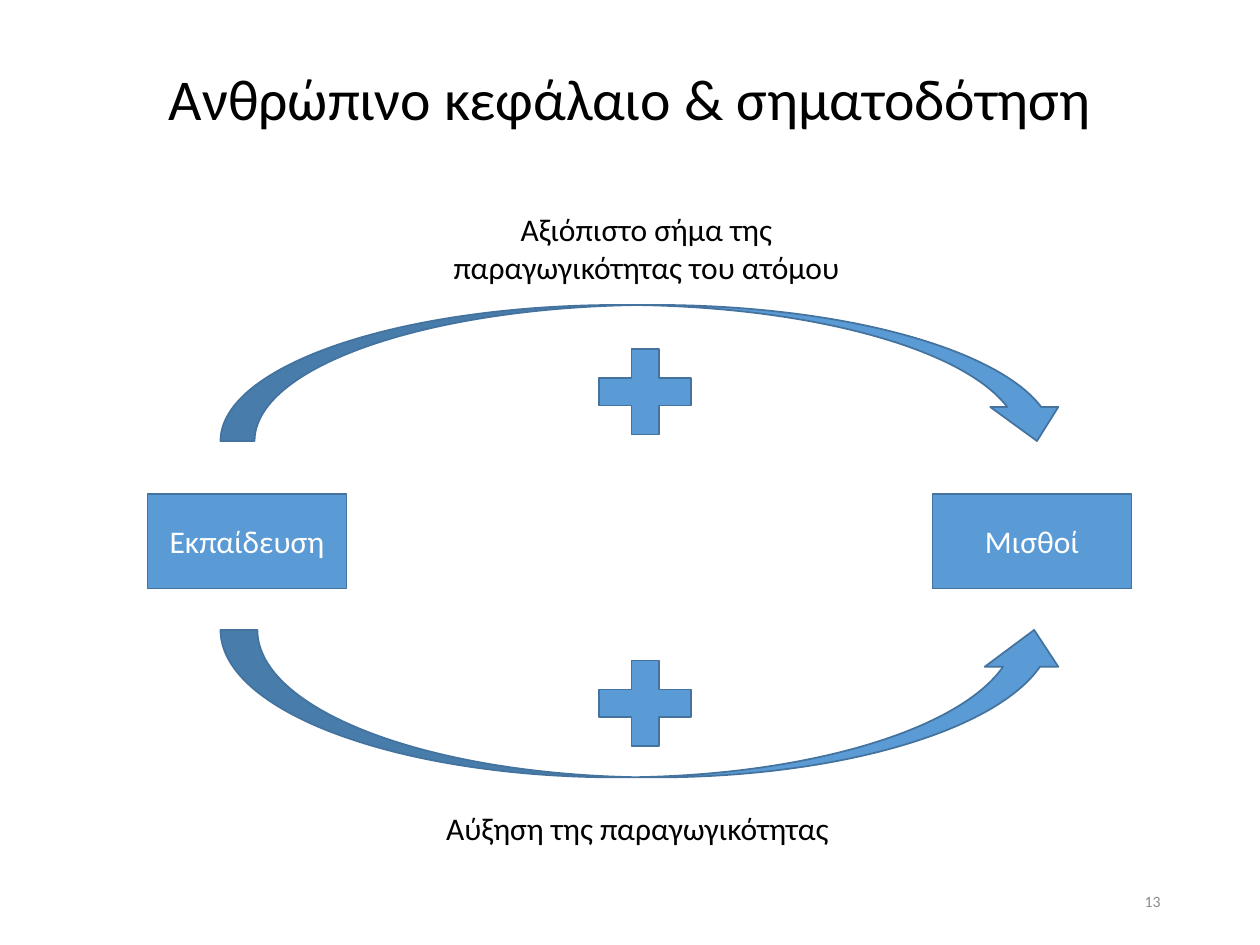
from dataclasses import dataclass

from pptx import Presentation
from pptx import util as u
from pptx.dml.color import RGBColor
from pptx.enum import shapes, text

FONT = "Calibri"
BLUE, OUTLINE = "5B9BD5", "43739E"
BLACK, WHITE, GREY = "000000", "FFFFFF", "8C8C8C"
KIND = shapes.MSO_SHAPE
ALIGN = text.PP_ALIGN
ANCHOR = text.MSO_ANCHOR


@dataclass
class Box:
    left: float
    top: float
    width: float
    height: float

    def lengths(self) -> list:
        return [u.Inches(v) for v in (self.left, self.top, self.width, self.height)]


@dataclass
class Figure:
    kind: int
    box: Box
    label: str = ""


@dataclass
class Caption:
    words: str
    box: Box
    size: float = 18
    color: str = BLACK
    align: int = ALIGN.CENTER
    anchor: int = ANCHOR.TOP


def paint(color_format, hex_value: str) -> None:
    color_format.rgb = RGBColor.from_string(hex_value)


def write(frame, words: str, size: float, color: str, align=ALIGN.CENTER,
          anchor=ANCHOR.MIDDLE, spacing: float = 1.0) -> None:
    frame.text = words
    paragraph = frame.paragraphs[0]
    formats = {
        frame: {"word_wrap": True, "auto_size": text.MSO_AUTO_SIZE.NONE,
                "vertical_anchor": anchor},
        paragraph: {"alignment": align, "line_spacing": spacing},
        paragraph.runs[0].font: {"name": FONT, "size": u.Pt(size)},
    }
    for target, values in formats.items():
        for name, value in values.items():
            setattr(target, name, value)
    paint(paragraph.runs[0].font.color, color)


def draw_figure(slide, figure: Figure) -> None:
    shape = slide.shapes.add_shape(figure.kind, *figure.box.lengths())
    shape.shadow.inherit = False
    shape.fill.solid()
    paint(shape.fill.fore_color, BLUE)
    paint(shape.line.color, OUTLINE)
    shape.line.width = u.Pt(1)
    if figure.label:
        write(shape.text_frame, figure.label, 18, WHITE)


def draw_caption(slide, caption: Caption) -> None:
    area = slide.shapes.add_textbox(*caption.box.lengths())
    write(area.text_frame, caption.words, caption.size, caption.color,
          caption.align, caption.anchor)


FIGURES = [
    # Cause and effect
    Figure(KIND.RECTANGLE, Box(1.17, 3.92, 1.58, 0.75), "Εκπαίδευση"),
    Figure(KIND.RECTANGLE, Box(7.4, 3.92, 1.58, 0.75), "Μισθοί"),
    # The two routes between them
    Figure(KIND.CURVED_UP_ARROW, Box(1.75, 5, 6.75, 1.17)),
    Figure(KIND.CURVED_DOWN_ARROW, Box(1.75, 2.42, 6.75, 1.08)),
    # Positive effect of each route
    Figure(KIND.MATH_PLUS, Box(4.62, 5.12, 1, 0.92)),
    Figure(KIND.MATH_PLUS, Box(4.62, 2.65, 1, 0.92)),
]

CAPTIONS = [
    Caption("Αξιόπιστο σήμα της παραγωγικότητας του ατόμου",
            Box(3.42, 1.62, 3.42, 0.71)),
    Caption("Αύξηση της παραγωγικότητας", Box(3.42, 6.37, 3.28, 0.4)),
    # Page number
    Caption("13", Box(7.06, 6.95, 2.25, 0.4), 9, GREY, ALIGN.RIGHT, ANCHOR.MIDDLE),
]


def main() -> None:
    deck = Presentation()
    deck.slide_width, deck.slide_height = u.Inches(10), u.Inches(7.5)
    slide = deck.slides.add_slide(deck.slide_layouts[5])

    # Title
    title = slide.shapes.title
    title.left, title.top, title.width, title.height = Box(0.69, 0.4, 8.62, 0.81).lengths()
    write(title.text_frame, "Ανθρώπινο κεφάλαιο & σηματοδότηση", 33, BLACK, spacing=0.9)

    # Diagram and its captions
    for figure in FIGURES:
        draw_figure(slide, figure)
    for caption in CAPTIONS:
        draw_caption(slide, caption)

    deck.save("out.pptx")


if __name__ == "__main__":
    main()
